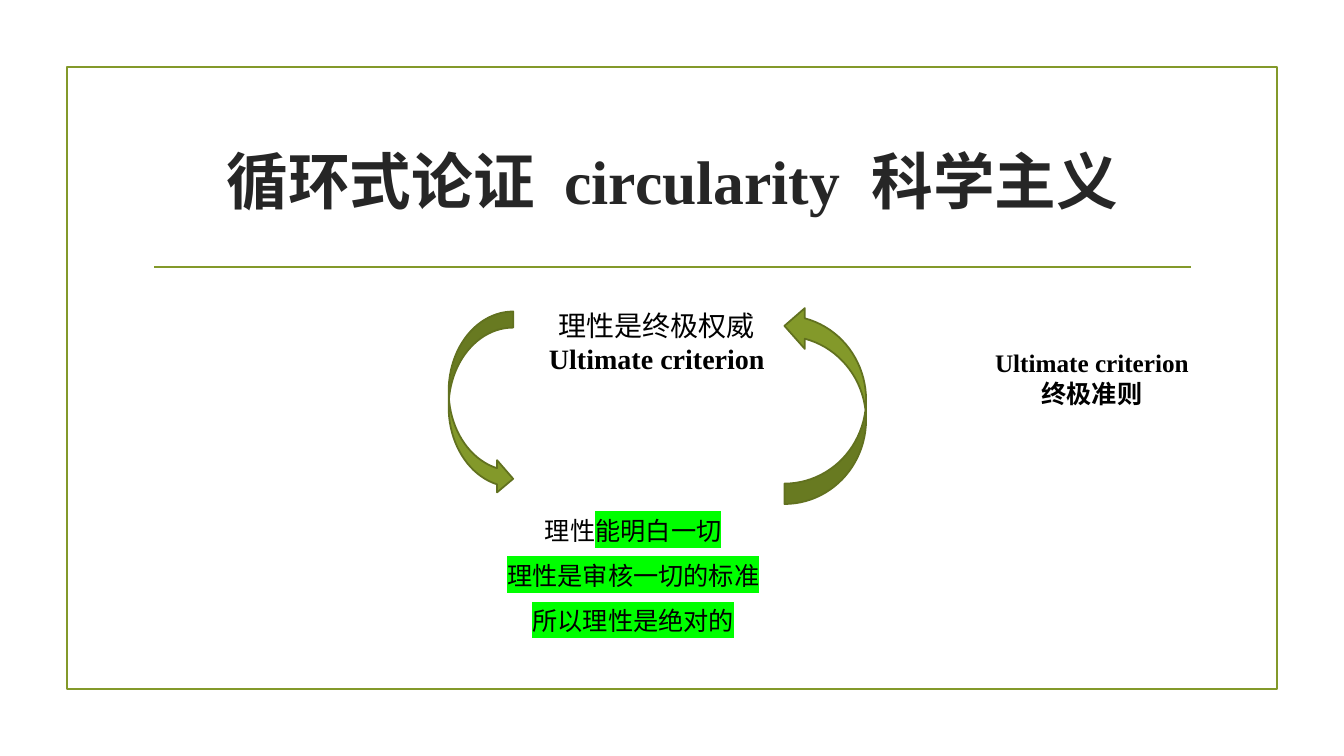
from lxml.etree import SubElement
from pptx import Presentation
from pptx.dml.color import RGBColor
from pptx.enum.shapes import MSO_CONNECTOR, MSO_SHAPE
from pptx.enum.text import MSO_ANCHOR, PP_ALIGN
from pptx.oxml.ns import qn
from pptx.util import Inches, Pt

LATIN, CHINESE = "Times New Roman", "Noto Sans CJK SC"
GREEN, DARK_GREEN, MARKER = "83992A", "61711F", "00FF00"
INK, BLACK = "262626", "000000"
WIDTH, HEIGHT = 13.33, 7.5
LINE_WIDTH = 1.25

# Each paragraph is a list of (text, format) spans.
TITLE = [[("循环式论证", {}), (" ", {"spacing": 11}), ("circularity", {}),
          (" ", {"spacing": 11}), ("科学主义", {})]]
SIDE_NOTE = [[("Ultimate criterion", {})], [("终极准则", {})]]
AUTHORITY = [[("理性是终极权威", {"font": CHINESE})],
             [("Ultimate criterion", {"bold": True})]]
REASONING = [
    [("理性", {}), ("能明白一切", {"highlight": MARKER})],
    [("理性是审核一切的标准", {"highlight": MARKER})],
    [("所以理性是绝对的", {"highlight": MARKER})],
]

TEXTS = [
    (TITLE, (1.42, 1.07, 10.5, 1.43),
     dict(size=44, color=INK, bold=True, anchor=MSO_ANCHOR.MIDDLE)),
    (SIDE_NOTE, (9.74, 3.4, 2.18, 0.71), dict(size=18, bold=True, wrap=False)),
    (AUTHORITY, (5.32, 3.01, 2.39, 0.77), dict(size=20, wrap=False)),
    (REASONING, (4.37, 4.91, 3.82, 1.39),
     dict(size=18, font=CHINESE, line_spacing=1.5)),
]
ARROWS = [
    (MSO_SHAPE.CURVED_DOWN_ARROW, (3.86, 3.68, 1.82, 0.64), 90, True),
    (MSO_SHAPE.CURVED_UP_ARROW, (7.2, 3.61, 1.97, 0.81), 270, False),
]


def rgb(value):
    return RGBColor.from_string(value)


def add_span(para, text, size, color=BLACK, font=LATIN, bold=False,
             highlight=None, spacing=None):
    """Add a run; spacing is extra points after each character."""
    span = para.add_run()
    span.text = text
    span.font.size = Pt(size)
    span.font.bold = bold
    span.font.color.rgb = rgb(color)
    properties = span._r.get_or_add_rPr()
    if highlight:
        marker = SubElement(properties, qn("a:highlight"))
        SubElement(marker, qn("a:srgbClr")).set("val", highlight)
    if spacing:
        properties.set("spc", str(spacing * 100))
    span.font.name = font
    SubElement(properties, qn("a:ea")).set("typeface", CHINESE)


def add_text(page, paragraphs, place, wrap=True, anchor=MSO_ANCHOR.TOP,
             line_spacing=None, **style):
    frame = page.shapes.add_textbox(*map(Inches, place)).text_frame
    frame.word_wrap = wrap
    frame.vertical_anchor = anchor
    for index, spans in enumerate(paragraphs):
        para = frame.add_paragraph() if index else frame.paragraphs[0]
        para.alignment = PP_ALIGN.CENTER
        if line_spacing:
            para.line_spacing = line_spacing
        for text, changes in spans:
            add_span(para, text, **{**style, **changes})


def add_figure(page, kind, place, line, fill=None):
    figure = page.shapes.add_shape(kind, *map(Inches, place))
    figure.shadow.inherit = False
    if fill:
        figure.fill.solid()
        figure.fill.fore_color.rgb = rgb(fill)
    else:
        figure.fill.background()
    figure.line.color.rgb = rgb(line)
    figure.line.width = Pt(LINE_WIDTH)
    return figure


def add_rule(page, left, right, top):
    rule = page.shapes.add_connector(
        MSO_CONNECTOR.STRAIGHT, *map(Inches, (left, top, right, top)))
    rule.line.color.rgb = rgb(GREEN)
    rule.line.width = Pt(LINE_WIDTH)
    SubElement(rule._element.spPr, qn("a:effectLst"))


def main():
    deck = Presentation()
    deck.slide_width, deck.slide_height = Inches(WIDTH), Inches(HEIGHT)
    page = deck.slides.add_slide(deck.slide_layouts[6])

    frame_width, frame_height = 12, 6.17
    margins = (WIDTH - frame_width) / 2, (HEIGHT - frame_height) / 2
    add_figure(page, MSO_SHAPE.RECTANGLE,
               (*margins, frame_width, frame_height), GREEN)
    add_rule(page, 1.53, 11.81, 2.65)

    for kind, place, angle, flipped in ARROWS:
        arrow = add_figure(page, kind, place, DARK_GREEN, GREEN)
        arrow.rotation = angle
        if flipped:
            arrow._element.spPr.xfrm.set("flipV", "1")
    for paragraphs, place, style in TEXTS:
        add_text(page, paragraphs, place, **style)
    deck.save("out.pptx")


if __name__ == "__main__":
    main()
